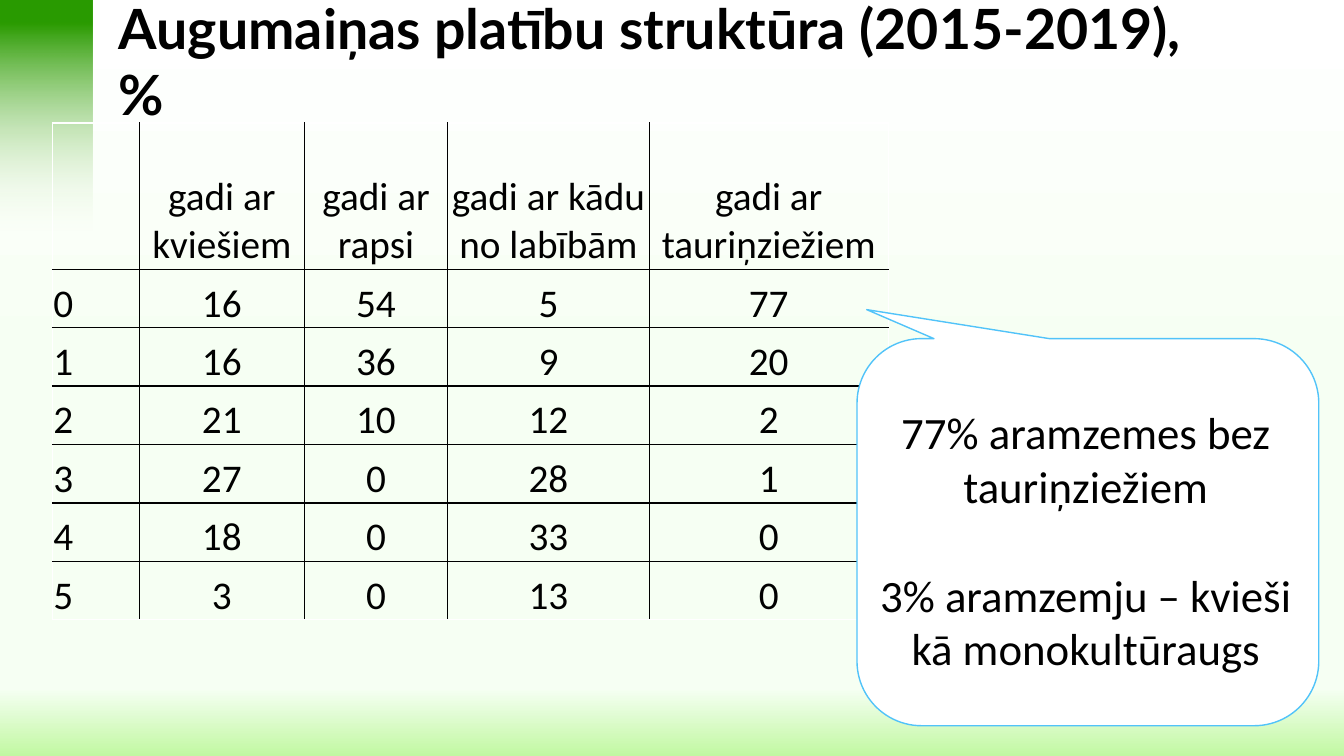
from lxml import etree
from pptx import Presentation
from pptx.dml.color import RGBColor
from pptx.enum.shapes import MSO_SHAPE
from pptx.enum.text import MSO_ANCHOR, PP_ALIGN
from pptx.oxml.ns import qn
from pptx.util import Inches, Pt

RECT, CALLOUT = MSO_SHAPE.RECTANGLE, MSO_SHAPE.ROUNDED_RECTANGULAR_CALLOUT
LEFT, CENTER = PP_ALIGN.LEFT, PP_ALIGN.CENTER
TOP, MIDDLE, BOTTOM = MSO_ANCHOR.TOP, MSO_ANCHOR.MIDDLE, MSO_ANCHOR.BOTTOM

TITLE = "Augumaiņas platību struktūra (2015-2019), %"
ROWS = [
    ("", "gadi ar kviešiem", "gadi ar rapsi", "gadi ar kādu no labībām",
     "gadi ar tauriņziežiem"),
    (0, 16, 54, 5, 77),
    (1, 16, 36, 9, 20),
    (2, 21, 10, 12, 2),
    (3, 27, 0, 28, 1),
    (4, 18, 0, 33, 0),
    (5, 3, 0, 13, 0),
]
NOTES = ["77% aramzemes bez tauriņziežiem", "3% aramzemju – kvieši kā monokultūraugs"]

COL_WIDTHS = [0.86, 1.64, 1.42, 2, 2.37]
ROW_HEIGHTS = [1.45] + [0.58] * 6
BLACK, WHITE, BLUE = "000000", "FFFFFF", "51C3F9"
# position %, colour, opacity %
PAGE_STOPS = [(1, WHITE, 100), (50, "F6FFF3", 100), (91, "F6FFF3", 100), (100, "C1F8A2", 10)]
BAR_STOPS = [(10, "2A9B00", 100), (100, "ECF9DF", 0)]

TITLE_FONT = {"name": "Lato", "size": Pt(39.6), "bold": True}
TABLE_FONT = {"name": "Calibri", "size": Pt(28), "bold": False}
NOTE_FONT = {"name": "Calibri", "size": Pt(32)}


def rgb(color):
    return RGBColor.from_string(color)


def box(left, top, width, height):
    return [Inches(v) for v in (left, top, width, height)]


def add_color(parent, color, opacity=100):
    clr = etree.SubElement(parent, qn("a:srgbClr"), val=color)
    if opacity < 100:
        etree.SubElement(clr, qn("a:alpha"), val=str(opacity * 1000))


def fill_down(fill, element, stops):
    """Give a fill a top-to-bottom gradient with any number of stops."""
    fill.gradient()
    fill.gradient_angle = 270
    stop_list = element.find(".//" + qn("a:gsLst"))
    for old in list(stop_list):
        stop_list.remove(old)
    for pos, color, opacity in stops:
        stop = etree.SubElement(stop_list, qn("a:gs"), pos=str(pos * 1000))
        add_color(stop, color, opacity)


def write(p, text, font, align):
    p.alignment = align
    r = p.add_run()
    r.text = str(text)
    for name, value in font.items():
        setattr(r.font, name, value)
    r.font.color.rgb = rgb(BLACK)


def add_text(slide, place, texts, font, align, anchor, gap=0):
    tf = slide.shapes.add_textbox(*box(*place)).text_frame
    tf.word_wrap = True
    tf.vertical_anchor = anchor
    for i, text in enumerate(texts):
        p = tf.add_paragraph() if i else tf.paragraphs[0]
        if i:
            p.space_before = Pt(gap)
        write(p, text, font, align)


def set_borders(cell, colors):
    tc_pr = cell._tc.get_or_add_tcPr()
    for side, color in colors.items():
        ln = etree.SubElement(tc_pr, qn("a:ln" + side), w=str(Pt(1)))
        add_color(etree.SubElement(ln, qn("a:solidFill")), color)


def add_area_table(slide):
    last_row, last_col = len(ROWS) - 1, len(COL_WIDTHS) - 1
    place = box(0.52, 1.22, sum(COL_WIDTHS), sum(ROW_HEIGHTS))
    table = slide.shapes.add_table(len(ROWS), len(COL_WIDTHS), *place).table
    table.first_row = table.horz_banding = False
    for col, width in zip(table.columns, COL_WIDTHS):
        col.width = Inches(width)
    for i, values in enumerate(ROWS):
        table.rows[i].height = Inches(ROW_HEIGHTS[i])
        for j, value in enumerate(values):
            cell = table.cell(i, j)
            cell.margin_left = cell.margin_right = cell.margin_top = Inches(0.01)
            cell.margin_bottom = 0
            cell.vertical_anchor = BOTTOM
            # The outer frame is white, the inner grid black
            outer = {"L": j == 0, "R": j == last_col, "T": i == 0, "B": i == last_row}
            set_borders(cell, {s: WHITE if edge else BLACK for s, edge in outer.items()})
            cell.fill.background()
            if value != "":
                write(cell.text_frame.paragraphs[0], value, TABLE_FONT, CENTER if j else LEFT)


def main():
    prs = Presentation()
    prs.slide_width, prs.slide_height = Inches(13.33), Inches(7.5)
    slide = prs.slides.add_slide(prs.slide_layouts[6])
    fill_down(slide.background.fill, slide.element, PAGE_STOPS)

    bar = slide.shapes.add_shape(RECT, *box(0, 0, 0.92, 2.29))
    bar.shadow.inherit = False
    bar.line.fill.background()
    fill_down(bar.fill, bar.element, BAR_STOPS)

    add_text(slide, (1.08, 0.13, 11.02, 0.94), [TITLE], TITLE_FONT, LEFT, MIDDLE)
    add_area_table(slide)

    callout = slide.shapes.add_shape(CALLOUT, *box(8.5, 3.36, 4.58, 3.84))
    callout.shadow.inherit = False
    for i, value in enumerate((-0.479, -0.575, 0.167)):
        callout.adjustments[i] = value
    callout.fill.solid()
    callout.fill.fore_color.rgb = rgb(WHITE)
    callout.line.color.rgb = rgb(BLUE)
    callout.line.width = Pt(1)
    add_text(slide, (8.48, 3.97, 4.58, 2.79), NOTES, NOTE_FONT, CENTER, TOP, gap=39)

    prs.save("out.pptx")


if __name__ == "__main__":
    main()
